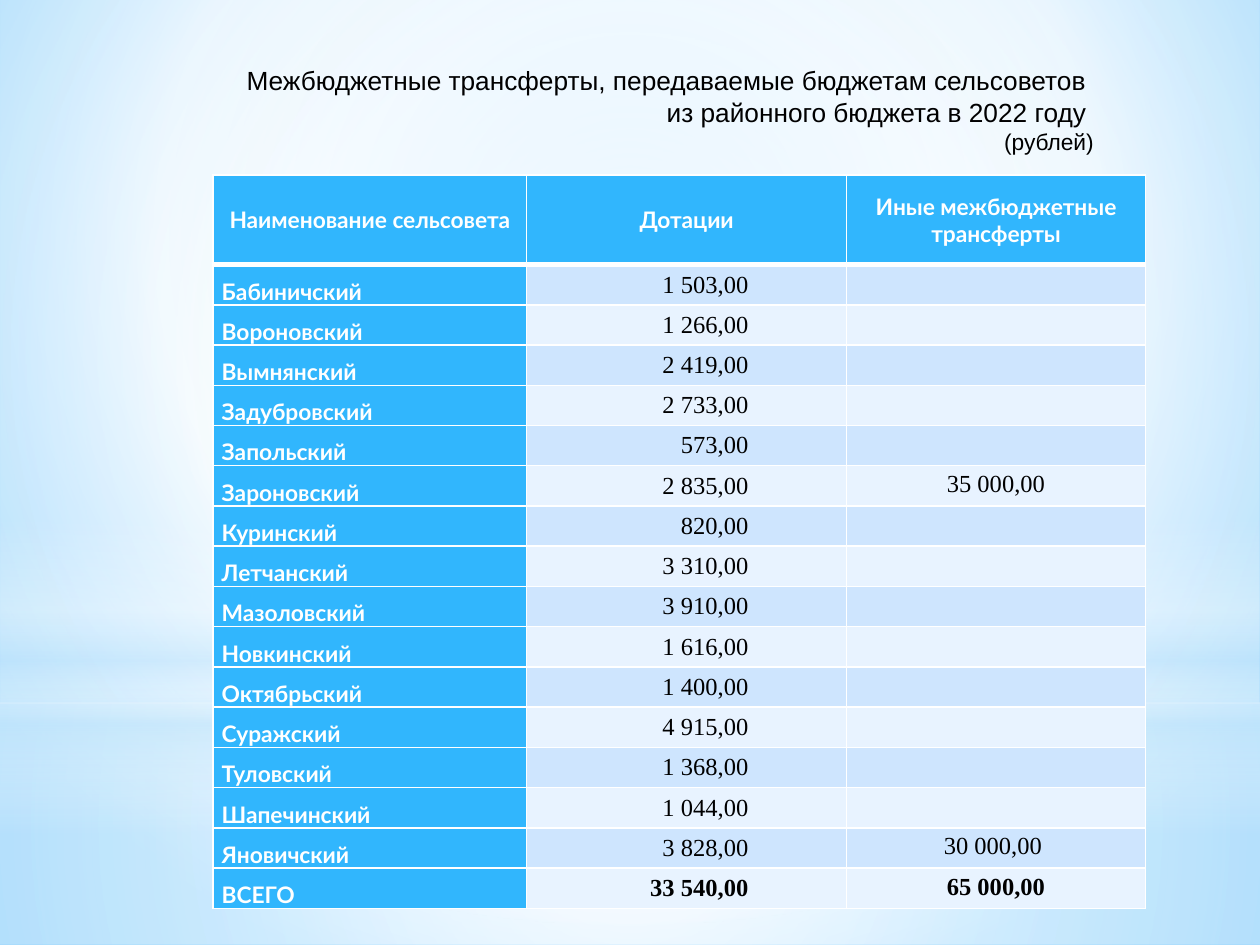
from lxml import etree
from pptx import Presentation
from pptx.dml.color import RGBColor
from pptx.enum.shapes import MSO_SHAPE as Shape
from pptx.enum.text import MSO_ANCHOR as Anchor, PP_ALIGN as Align
from pptx.oxml import parse_xml
from pptx.oxml.ns import nsdecls, qn
from pptx.util import Inches, Pt

WIDTH, HEIGHT = 10, 7.5
COLORS = {"white": "FFFFFF", "black": "000000", "blue": "31B6FD", "haze": "C6E7FC",
          "sky": "B0E0FF", "deep": "6BC5FF", "band": "CEE5FE", "pale": "E8F3FF"}
LABEL = dict(font="Lato", size=13, color="white", bold=True)
NUMBER = dict(font="Times New Roman", size=14, color="black", bold=False)
HEADING = dict(font="Arial", size=15, color="black", bold=False)

HEADERS = ["Наименование сельсовета", "Дотации", "Иные межбюджетные трансферты"]
ROWS = [
    ("Бабиничский", "1 503,00", ""),
    ("Вороновский", "1 266,00", ""),
    ("Вымнянский", "2 419,00", ""),
    ("Задубровский", "2 733,00", ""),
    ("Запольский", "573,00", ""),
    ("Зароновский", "2 835,00", "35 000,00"),
    ("Куринский", "820,00", ""),
    ("Летчанский", "3 310,00", ""),
    ("Мазоловский", "3 910,00", ""),
    ("Новкинский", "1 616,00", ""),
    ("Октябрьский", "1 400,00", ""),
    ("Суражский", "4 915,00", ""),
    ("Туловский", "1 368,00", ""),
    ("Шапечинский", "1 044,00", ""),
    ("Яновичский", "3 828,00", "30 000,00 "),
    ("ВСЕГО", "33 540,00", "65 000,00"),
]
TITLE = [("Межбюджетные трансферты, передаваемые бюджетам сельсоветов ", 15),
         ("из районного бюджета в 2022 году ", 15),
         ("(рублей)", 13)]

# Gradient stops: position, colour, opacity in percent
CENTER = (50, 50, 50, 50)
GLOWS = [
    (Shape.RECTANGLE, 5.58, 1.92, CENTER,
     [(0, "white", 91), (37, "white", 76), (100, "haze", 79)]),
    (Shape.RECTANGLE, 0, 5.58, CENTER,
     [(0, "white", 89), (48, "white", 62), (100, "haze", 79)]),
    (Shape.RECTANGLE, 4.12, 2.5, None,
     [(0, "white", 0), (29, "white", 30), (45, "haze", 40),
      (55, "white", 26), (65, "haze", 60), (100, "white", 0)]),
    (Shape.OVAL, 1.75, 5.58, CENTER, [(0, "white", 100), (56, "white", 0)]),
]


def gradient(stops, focus):
    """Radial gradient around focus (l, t, r, b), or a vertical one without it."""
    marks = "".join(
        f'<a:gs pos="{pos * 1000}"><a:srgbClr val="{COLORS[color]}">'
        f'<a:alpha val="{alpha * 1000}"/></a:srgbClr></a:gs>'
        for pos, color, alpha in stops)
    if focus:
        sides = " ".join(f'{side}="{share * 1000}"' for side, share in zip("ltrb", focus))
        course = f'<a:path path="circle"><a:fillToRect {sides}/></a:path>'
    else:
        course = '<a:lin ang="5400000" scaled="0"/>'
    return parse_xml(f'<a:gradFill {nsdecls("a")} rotWithShape="1">'
                     f'<a:gsLst>{marks}</a:gsLst>{course}</a:gradFill>')


def replace_gradient(fill, parent, stops, focus):
    fill.gradient()
    parent.replace(parent.find(qn("a:gradFill")), gradient(stops, focus))


def add_glow(page, kind, top, height, focus, stops):
    glow = page.shapes.add_shape(kind, 0, Inches(top), Inches(WIDTH), Inches(height))
    glow.shadow.inherit = False
    glow.line.fill.background()
    replace_gradient(glow.fill, glow._element.spPr, stops, focus)


def add_span(para, text, font, size, color, bold):
    span = para.add_run()
    span.text = text
    span.font.name, span.font.size, span.font.bold = font, Pt(size), bold
    span.font.color.rgb = RGBColor.from_string(COLORS[color])


def set_borders(cell, bottom):
    props = cell._tc.get_or_add_tcPr()
    for index, side in enumerate("LRTB"):
        width = bottom if side == "B" else 1
        line = etree.Element(qn(f"a:ln{side}"), w=str(Pt(width)))
        solid = etree.SubElement(line, qn("a:solidFill"))
        etree.SubElement(solid, qn("a:srgbClr"), val=COLORS["white"])
        props.insert(index, line)


def fill_cell(cell, text, style, fill, align, anchor=Anchor.MIDDLE, right=0.07,
              spacing=None, bottom=1):
    cell.margin_left, cell.margin_right = Inches(0.07), Inches(right)
    cell.margin_top = cell.margin_bottom = 0
    cell.vertical_anchor = anchor
    cell.fill.solid()
    cell.fill.fore_color.rgb = RGBColor.from_string(COLORS[fill])
    set_borders(cell, bottom)
    if text:
        para = cell.text_frame.paragraphs[0]
        para.alignment, para.line_spacing = align, spacing
        add_span(para, text, **style)


def add_transfers(page):
    header_height, height = 0.71, 5.82
    frame = page.shapes.add_table(len(ROWS) + 1, len(HEADERS), Inches(1.69), Inches(1.39),
                                  Inches(7.4), Inches(height))
    table = frame.table
    for column, width in zip(table.columns, (2.49, 2.54, 2.37)):
        column.width = Inches(width)
    for row in table.rows:
        row.height = Inches((height - header_height) / len(ROWS))
    table.rows[0].height = Inches(header_height)

    for col, text in enumerate(HEADERS):
        fill_cell(table.cell(0, col), text, LABEL, "blue", Align.CENTER, bottom=3)
    for row, (name, grant, other) in enumerate(ROWS, 1):
        band = "band" if row % 2 else "pale"
        style = dict(NUMBER, bold=row == len(ROWS))
        fill_cell(table.cell(row, 0), name, LABEL, "blue", Align.LEFT, Anchor.BOTTOM)
        fill_cell(table.cell(row, 1), grant, style, band, Align.RIGHT, right=0.78)
        fill_cell(table.cell(row, 2), other, style, band, Align.CENTER, spacing=Pt(14))


def place_title(page):
    title = page.shapes.title
    title.left, title.top = Inches(1.45), Inches(0.46)
    title.width, title.height = Inches(7.33), Inches(0.82)
    box = title.text_frame
    box.word_wrap, box.vertical_anchor = True, Anchor.MIDDLE
    for index, (text, size) in enumerate(TITLE):
        para = box.add_paragraph() if index else box.paragraphs[0]
        para.alignment = Align.RIGHT
        add_span(para, text, **dict(HEADING, size=size))
    # Bring the title in front of the glows
    page.shapes._spTree.append(title._element)


def main():
    deck = Presentation()
    deck.slide_width, deck.slide_height = Inches(WIDTH), Inches(HEIGHT)
    page = deck.slides.add_slide(deck.slide_layouts[5])

    # Background
    back = page.background
    stops = [(0, "sky", 100), (60, "white", 100), (100, "deep", 100)]
    replace_gradient(back.fill, page._element.cSld.bg.bgPr, stops, (20, 10, 20, 60))
    for kind, top, height, focus, stops in GLOWS:
        add_glow(page, kind, top, height, focus, stops)

    # Content
    add_transfers(page)
    place_title(page)
    deck.save("out.pptx")


if __name__ == "__main__":
    main()
